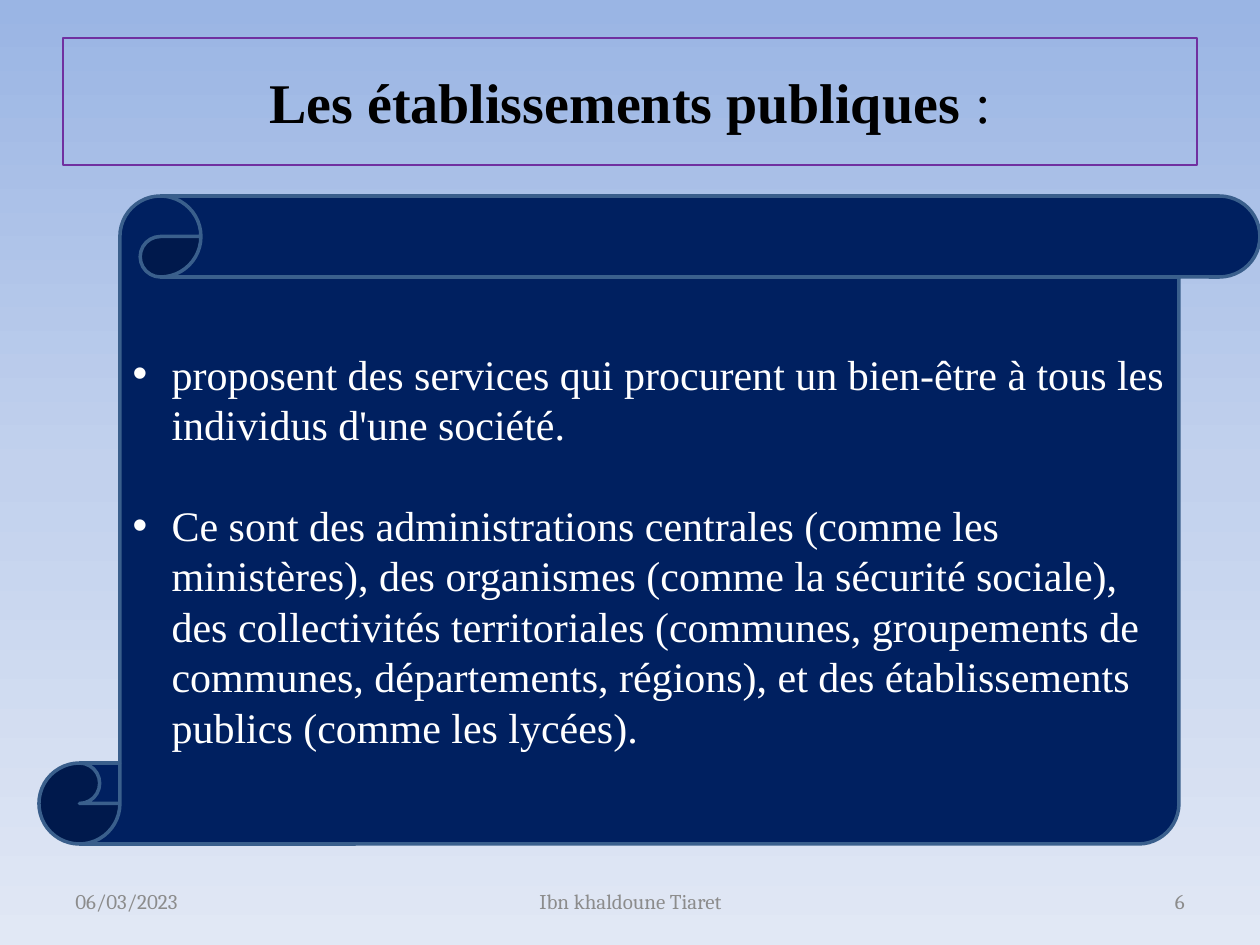
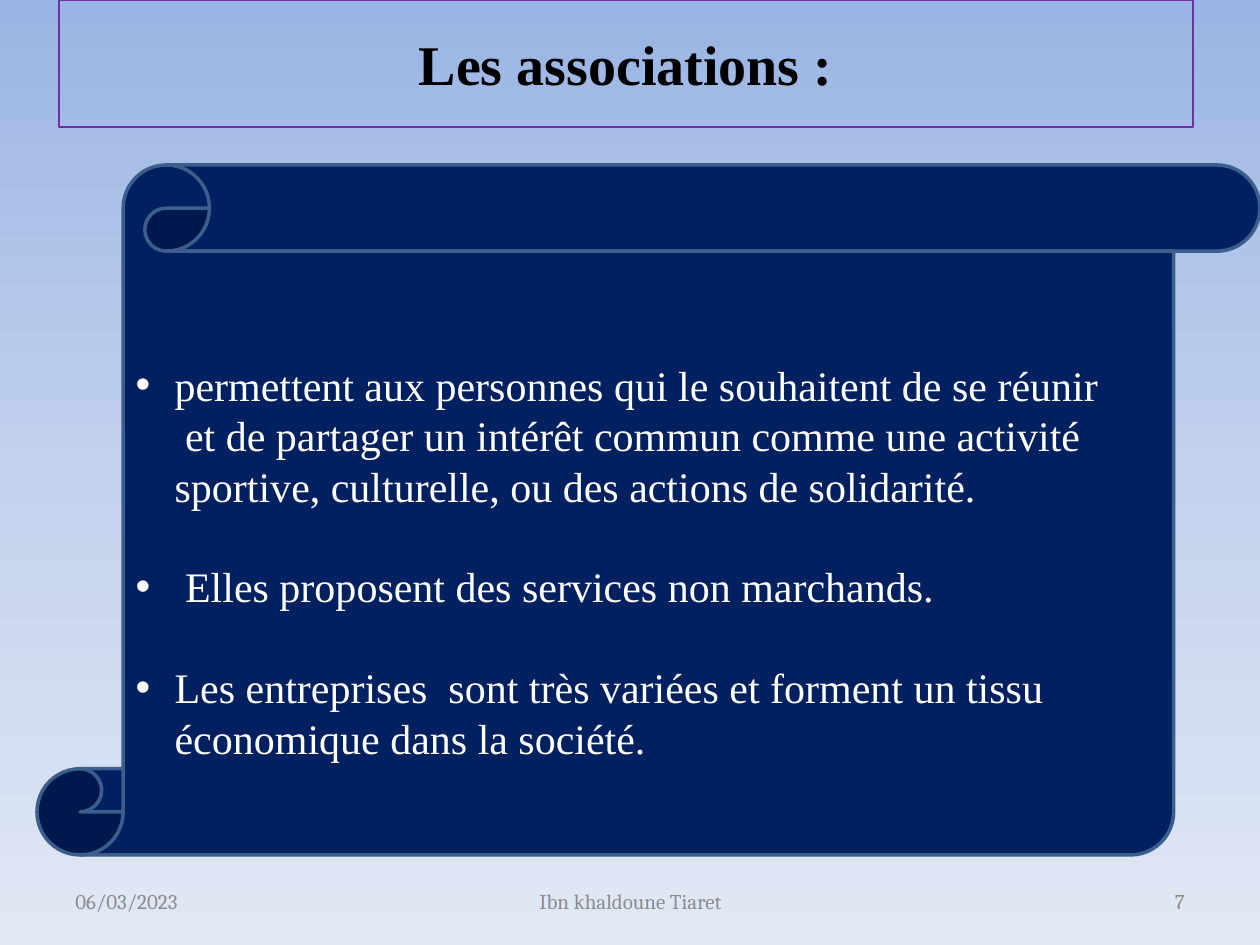
from copy import deepcopy

from pptx import Presentation
from pptx.dml.color import RGBColor
from pptx.enum.shapes import MSO_SHAPE
from pptx.enum.text import MSO_ANCHOR, MSO_AUTO_SIZE, PP_ALIGN
from pptx.oxml.ns import qn
from pptx.util import Emu, Pt

# Shared look
SLIDE_W, SLIDE_H = 1260, 945
PX_PER_INCH = 126
SKY = [(0, "9AB5E4"), (0.5, "C2D1ED"), (1, "E1E8F5")]
NAVY, STEEL, PURPLE = "002060", "3A5F8C", "7030A0"
BLACK, WHITE, GREY = "000000", "FFFFFF", "8C8C8C"
SERIF, FOOTER_FONT = "Times New Roman", "Cambria"
LINE_PITCH = Pt(28.8)
BULLET_INDENT = 39
TITLE_W, TITLE_H = 1134, 127
FOOTER_TOP, FOOTER_H = 876, 50
DATE, AUTHOR = "06/03/2023", "Ibn khaldoune Tiaret"


def px(length):
    return Emu(round(length * 914400 / PX_PER_INCH))


def color(hex_code):
    return RGBColor.from_string(hex_code)


def place(shape, left, top, width, height):
    shape.left, shape.top = px(left), px(top)
    shape.width, shape.height = px(width), px(height)


def style_run(run, size, font, hex_code, bold=False):
    run.font.size = Pt(size)
    run.font.name = font
    run.font.bold = bold
    run.font.color.rgb = color(hex_code)


def set_background(master):
    """Give the master a vertical three-stop gradient."""
    sky = master.background.fill
    sky.gradient()
    sky.gradient_angle = 270
    stop_list = master.element.find(".//" + qn("a:gsLst"))
    stop_list.append(deepcopy(stop_list[-1]))
    for stop, (position, hex_code) in zip(sky.gradient_stops, SKY):
        stop.position = position
        stop.color.rgb = color(hex_code)


def add_title(slide, left, top, heading, ending, ending_bold):
    title = slide.shapes.title
    place(title, left, top, TITLE_W, TITLE_H)
    title.line.color.rgb = color(PURPLE)
    title.line.width = Pt(0.75)
    frame = title.text_frame
    frame.auto_size = MSO_AUTO_SIZE.NONE
    frame.vertical_anchor = MSO_ANCHOR.MIDDLE
    frame.text = heading
    line = frame.paragraphs[0]
    line.alignment = PP_ALIGN.CENTER
    line.add_run().text = ending
    for run, bold in zip(line.runs, (True, ending_bold)):
        style_run(run, 32, SERIF, BLACK, bold)


def add_scroll_list(slide, left, top, height, list_top, items):
    """Draw a scroll reaching the right edge, with the bulleted list on it."""
    width = SLIDE_W - left
    scroll = slide.shapes.add_shape(
        MSO_SHAPE.VERTICAL_SCROLL, px(left), px(top), px(width), px(height))
    scroll.shadow.inherit = False
    scroll.fill.solid()
    scroll.fill.fore_color.rgb = color(NAVY)
    scroll.line.color.rgb = color(STEEL)
    scroll.line.width = Pt(2)

    # The roll takes one eighth of the height on each side
    roll = height // 8
    services = slide.placeholders[1]
    services.element.addprevious(scroll.element)
    place(services, left + roll, list_top,
          width - 2 * roll, top + height - roll - list_top)
    frame = services.text_frame
    frame.auto_size = MSO_AUTO_SIZE.NONE
    frame.vertical_anchor = MSO_ANCHOR.TOP
    frame.text = "\n".join(items)
    for index, item in enumerate(frame.paragraphs):
        item.line_spacing = LINE_PITCH
        item.space_before = LINE_PITCH if index else Pt(0)
        item.alignment = PP_ALIGN.LEFT
        indents = item._p.get_or_add_pPr()
        indents.set("marL", str(px(BULLET_INDENT)))
        indents.set("indent", str(-px(BULLET_INDENT)))
        for run in item.runs:
            style_run(run, 24, SERIF, WHITE)


def add_footer(slide, number):
    parts = [(63, 294, DATE, PP_ALIGN.LEFT),
             (431, 399, AUTHOR, PP_ALIGN.CENTER),
             (903, 294, str(number), PP_ALIGN.RIGHT)]
    for left, width, words, alignment in parts:
        footer = slide.shapes.add_textbox(
            px(left), px(FOOTER_TOP), px(width), px(FOOTER_H))
        frame = footer.text_frame
        frame.word_wrap = True
        frame.vertical_anchor = MSO_ANCHOR.MIDDLE
        frame.text = words
        frame.paragraphs[0].alignment = alignment
        style_run(frame.paragraphs[0].runs[0], 12, FOOTER_FONT, GREY)


def add_slide(prs, number, title, scroll):
    slide = prs.slides.add_slide(prs.slide_layouts[1])
    add_title(slide, *title)
    add_scroll_list(slide, *scroll)
    add_footer(slide, number)


def main():
    prs = Presentation()
    prs.slide_width, prs.slide_height = px(SLIDE_W), px(SLIDE_H)
    set_background(prs.slide_master)

    # Public institutions
    add_slide(prs, 6, (63, 38, "Les établissements publiques", " :", False), (
        39, 196, 648, 342, [
            "proposent des services qui procurent un bien-être à tous les "
            "individus d'une société.",
            "Ce sont des administrations centrales (comme les ministères), "
            "des organismes (comme la sécurité sociale), des collectivités "
            "territoriales (communes, groupements de communes, départements, "
            "régions), et des établissements publics (comme les lycées).",
        ]))

    # Associations
    add_slide(prs, 7, (59, 0, "Les associations", " :", True), (
        37, 165, 690, 353, [
            "permettent aux personnes qui le souhaitent de se réunir\v"
            " et de partager un intérêt commun comme une activité sportive, "
            "culturelle, ou des actions de solidarité.",
            " Elles proposent des services non marchands.",
            "Les entreprises  sont très variées et forment un tissu "
            "économique dans la société.",
        ]))

    prs.save("out.pptx")


if __name__ == "__main__":
    main()
